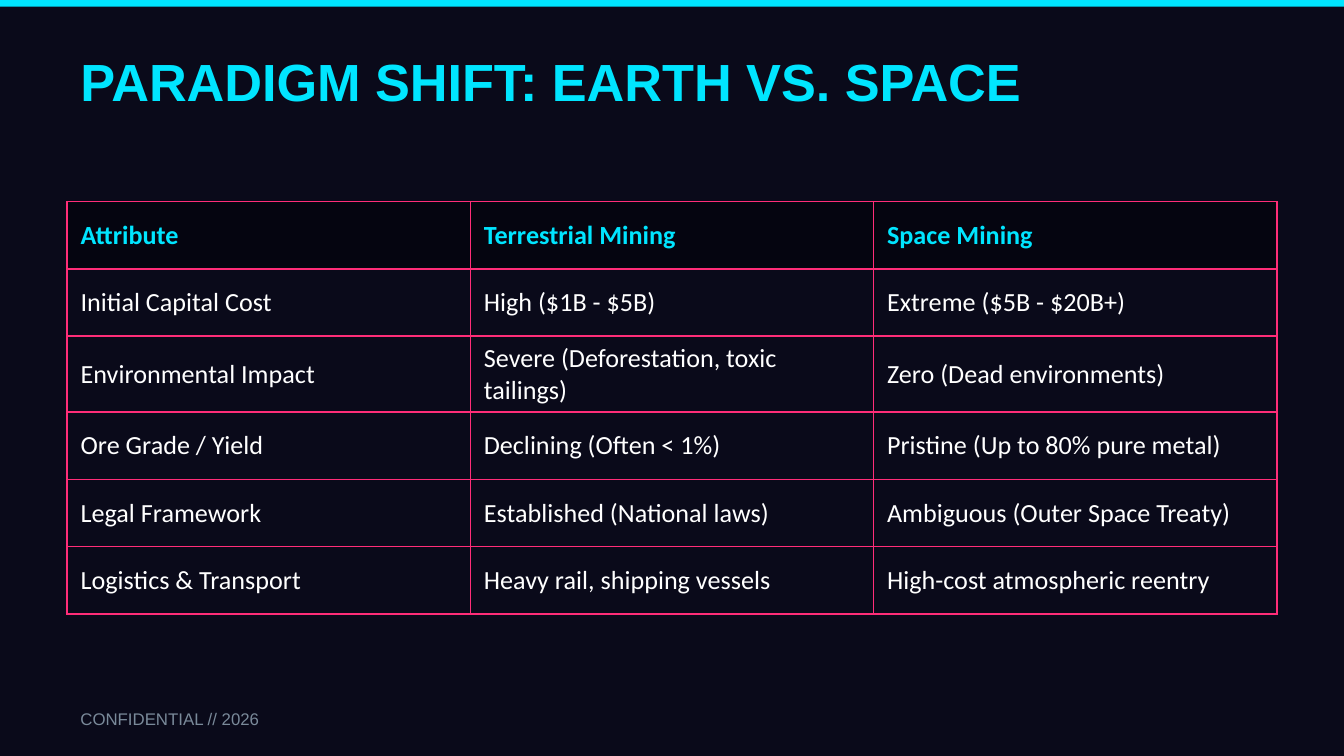
from lxml.etree import SubElement
from pptx import Presentation
from pptx.dml.color import RGBColor
from pptx.enum.shapes import MSO_SHAPE
from pptx.enum.text import MSO_ANCHOR
from pptx.oxml.ns import qn
from pptx.util import Pt

COLORS = {
    "background": "0A0A1A",
    "header": "050510",
    "accent": "00E5FF",
    "border": "FF2D78",
    "body": "FFFFFF",
    "muted": "7A8A9A",
}

ROWS = [
    ("Attribute", "Terrestrial Mining", "Space Mining"),
    ("Initial Capital Cost", "High ($1B - $5B)", "Extreme ($5B - $20B+)"),
    ("Environmental Impact", "Severe (Deforestation, toxic tailings)", "Zero (Dead environments)"),
    ("Ore Grade / Yield", "Declining (Often < 1%)", "Pristine (Up to 80% pure metal)"),
    ("Legal Framework", "Established (National laws)", "Ambiguous (Outer Space Treaty)"),
    ("Logistics & Transport", "Heavy rail, shipping vessels", "High-cost atmospheric reentry"),
]


def set_fill(fill, color):
    fill.solid()
    fill.fore_color.rgb = RGBColor.from_string(COLORS[color])


def write_text(text_frame, text, font_name, size, color, bold=False):
    text_frame.text = text
    font = text_frame.paragraphs[0].runs[0].font
    font.name = font_name
    font.size = Pt(size)
    font.bold = bold
    font.color.rgb = RGBColor.from_string(COLORS[color])


def add_top_bar(slide, left, top, width, height):
    bar = slide.shapes.add_shape(MSO_SHAPE.RECTANGLE, Pt(left), Pt(top), Pt(width), Pt(height))
    bar.shadow.inherit = False
    set_fill(bar.fill, "accent")
    bar.line.fill.background()


def add_label(slide, box, text, size, color, bold=False):
    label = slide.shapes.add_textbox(*map(Pt, box))
    label.text_frame.word_wrap = True
    label.text_frame.vertical_anchor = MSO_ANCHOR.MIDDLE
    write_text(label.text_frame, text, "Arial", size, color, bold)


def add_cell_borders(cell, color, width):
    properties = cell._tc.get_or_add_tcPr()
    for position, side in enumerate(("lnL", "lnR", "lnT", "lnB")):
        line = SubElement(properties, qn(f"a:{side}"), w=str(Pt(width)))
        fill = SubElement(line, qn("a:solidFill"))
        SubElement(fill, qn("a:srgbClr"), val=COLORS[color])
        # Border lines must come before the cell's fill
        properties.insert(position, line)


def add_comparison_table(slide, left, top, width, height):
    table = slide.shapes.add_table(
        len(ROWS), len(ROWS[0]), Pt(left), Pt(top), Pt(width), Pt(height)
    ).table
    for row_index, row in enumerate(ROWS):
        is_header = row_index == 0
        for column_index, text in enumerate(row):
            cell = table.cell(row_index, column_index)
            cell.vertical_anchor = MSO_ANCHOR.MIDDLE
            set_fill(cell.fill, "header" if is_header else "background")
            add_cell_borders(cell, "border", 1)
            text_color = "accent" if is_header else "body"
            write_text(cell.text_frame, text, "Calibri", 14, text_color, is_header)


def build_comparison_slide(presentation):
    slide = presentation.slides.add_slide(presentation.slide_layouts[6])
    set_fill(slide.background.fill, "background")
    add_top_bar(slide, 0, 0, 720, 3.6)
    add_label(slide, (36, 21.6, 648, 43.2), "PARADIGM SHIFT: EARTH VS. SPACE", 28, "accent", True)
    add_comparison_table(slide, 36, 108, 648, 216)
    add_label(slide, (36, 374.4, 360, 21.6), "CONFIDENTIAL // 2026", 9, "muted")


def main():
    presentation = Presentation()
    presentation.slide_width = Pt(720)
    presentation.slide_height = Pt(405)
    build_comparison_slide(presentation)
    presentation.save("out.pptx")


if __name__ == "__main__":
    main()
